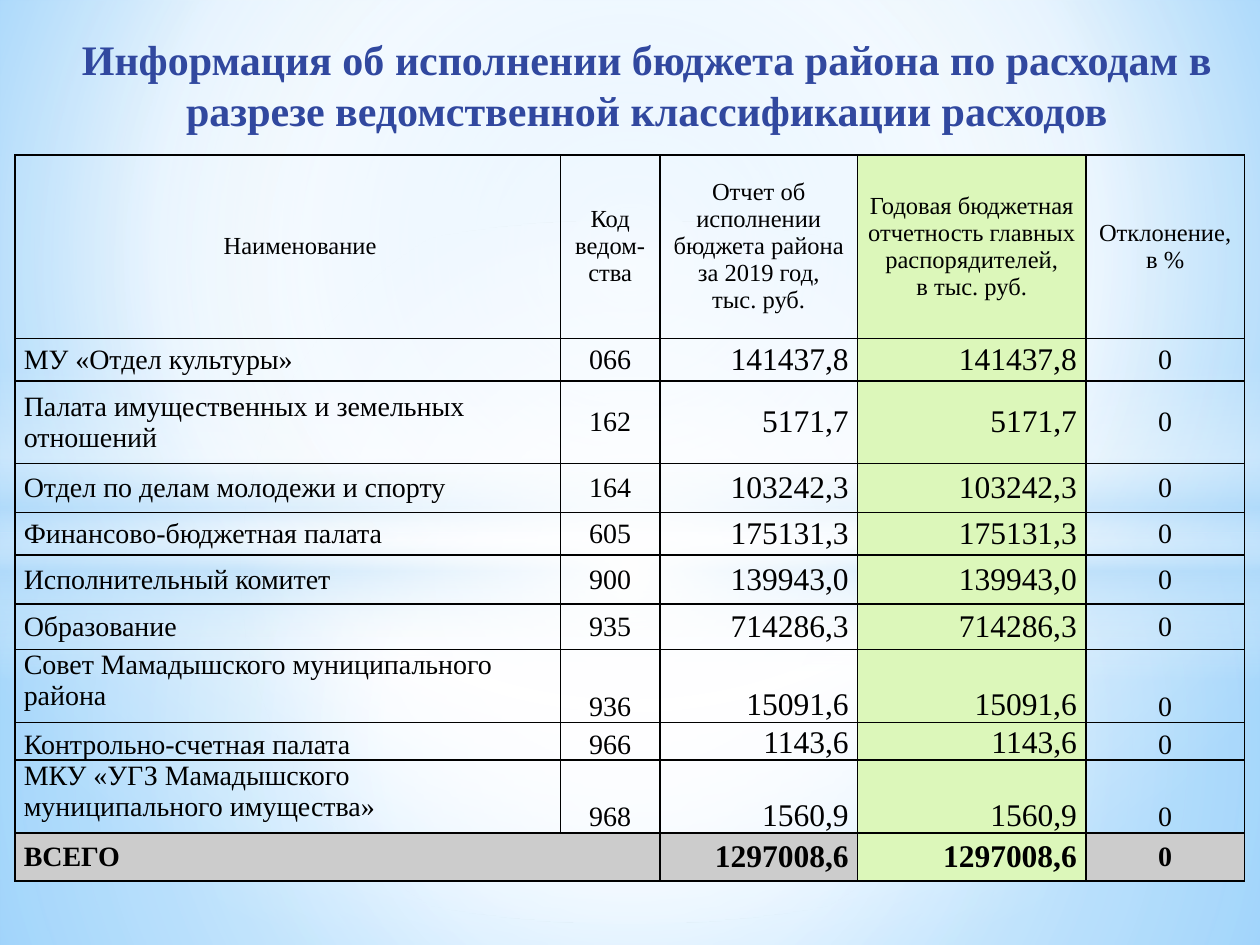
from dataclasses import dataclass

from lxml import etree
from pptx import Presentation
from pptx.dml.color import RGBColor
from pptx.enum.shapes import MSO_SHAPE
from pptx.enum.text import MSO_ANCHOR, PP_ALIGN
from pptx.oxml.ns import qn
from pptx.util import Cm, Pt

LEFT, CENTER, RIGHT = PP_ALIGN.LEFT, PP_ALIGN.CENTER, PP_ALIGN.RIGHT
TOP, MIDDLE, BOTTOM = MSO_ANCHOR.TOP, MSO_ANCHOR.MIDDLE, MSO_ANCHOR.BOTTOM
RECTANGLE, OVAL = MSO_SHAPE.RECTANGLE, MSO_SHAPE.OVAL

FONT = "Times New Roman"
COLORS = {
    "title": "31489F",
    "black": "000000",
    "white": "FFFFFF",
    "haze": "B4DCFA",
    "sky": "9ED5FF",
    "deep_sky": "5BB9FF",
    "green": "DCF7BA",
    "gray": "CCCCCC",
}
SLIDE_WIDTH, SLIDE_HEIGHT = 25.4, 19.05
CENTERED = (50, 50, 50, 50)


@dataclass
class Stop:
    position: int
    color: str
    opacity: int = 100


@dataclass
class Glow:
    kind: int
    top: float
    height: float
    stops: list[Stop]
    focus: tuple | None = CENTERED


@dataclass
class Department:
    name: str
    code: str
    amount: str
    height: float
    name_anchor: int = MIDDLE
    value_anchor: int = MIDDLE


@dataclass
class Column:
    heading: str
    width: float
    align: int
    size: int


GLOWS = [
    Glow(RECTANGLE, 10.74, 8.31,
         [Stop(0, "white", 91), Stop(37, "white", 76), Stop(100, "haze", 79)]),
    Glow(RECTANGLE, 0, 10.74,
         [Stop(0, "white", 89), Stop(48, "white", 62), Stop(100, "haze", 79)]),
    Glow(RECTANGLE, 7.37, 6.35,
         [Stop(0, "white", 0), Stop(29, "white", 30), Stop(45, "haze", 40),
          Stop(55, "white", 26), Stop(65, "haze", 60), Stop(100, "white", 0)], None),
    Glow(OVAL, 4.45, 14.17, [Stop(0, "white"), Stop(54, "white", 0)]),
]
COLUMNS = [
    Column("Наименование", 11, LEFT, 16),
    Column("Код ведом-ства", 2, CENTER, 16),
    Column("Отчет об исполнении бюджета района за 2019 год,\nтыс. руб.", 3.99, RIGHT, 18),
    Column("Годовая бюджетная отчетность главных распорядителей,\nв тыс. руб.",
           4.6, RIGHT, 18),
    Column("Отклонение,\nв %", 3.2, CENTER, 16),
]
REPORTING_COLUMN = 3
HEADER_HEIGHT = 3.7
DEPARTMENTS = [
    Department("МУ «Отдел культуры»", "066", "141437,8", 0.86),
    Department("Палата имущественных и земельных отношений", "162", "5171,7", 1.66),
    Department("Отдел по делам молодежи и спорту", "164", "103242,3", 0.99),
    Department("Финансово-бюджетная палата", "605", "175131,3", 0.86),
    Department("Исполнительный комитет", "900", "139943,0", 0.99),
    Department("Образование", "935", "714286,3", 0.91),
    Department("Совет Мамадышского муниципального района", "936", "15091,6", 1.47, TOP, BOTTOM),
    Department("Контрольно-счетная палата", "966", "1143,6", 0.76, BOTTOM, BOTTOM),
    Department("МКУ «УГЗ Мамадышского муниципального имущества»", "968", "1560,9",
               1.47, TOP, BOTTOM),
    Department("ВСЕГО", "", "1297008,6", 0.97),
]


def rgb(color: str) -> RGBColor:
    return RGBColor.from_string(COLORS[color])


def add_color(parent, color: str, opacity: int = 100) -> None:
    value = etree.SubElement(parent, qn("a:srgbClr"), val=COLORS[color])
    if opacity < 100:
        etree.SubElement(value, qn("a:alpha"), val=str(opacity * 1000))


def set_gradient(fill, properties, stops: list[Stop], focus: tuple | None) -> None:
    """Fill with a circular gradient around focus, or a vertical one without it."""
    fill.solid()
    solid = properties.find(qn("a:solidFill"))
    gradient = etree.Element(qn("a:gradFill"), rotWithShape="1")
    stop_list = etree.SubElement(gradient, qn("a:gsLst"))
    for stop in stops:
        node = etree.SubElement(stop_list, qn("a:gs"), pos=str(stop.position * 1000))
        add_color(node, stop.color, stop.opacity)
    if focus:
        circle = etree.SubElement(gradient, qn("a:path"), path="circle")
        edges = {side: str(part * 1000) for side, part in zip("ltrb", focus)}
        etree.SubElement(circle, qn("a:fillToRect"), edges)
    else:
        etree.SubElement(gradient, qn("a:lin"), ang="5400000", scaled="0")
    properties.replace(solid, gradient)


def draw_glow(slide, glow: Glow) -> None:
    shape = slide.shapes.add_shape(
        glow.kind, 0, Cm(glow.top), Cm(SLIDE_WIDTH), Cm(glow.height))
    shape.shadow.inherit = False
    shape.line.fill.background()
    set_gradient(shape.fill, shape._element.spPr, glow.stops, glow.focus)


def write_text(frame, text: str, align: int, size: int, color: str = "black",
               bold: bool = False) -> None:
    frame.text = text
    for paragraph in frame.paragraphs:
        paragraph.alignment = align
        font = paragraph.font
        font.name, font.size, font.bold = FONT, Pt(size), bold
        font.color.rgb = rgb(color)


def indent(paragraph) -> None:
    paragraph._p.get_or_add_pPr().set("marL", str(Cm(0.5)))


def add_borders(cell) -> None:
    properties = cell._tc.get_or_add_tcPr()
    for index, side in enumerate(("lnL", "lnR", "lnT", "lnB")):
        line = etree.Element(qn(f"a:{side}"), w=str(Pt(1)))
        add_color(etree.SubElement(line, qn("a:solidFill")), "black")
        properties.insert(index, line)


def fill_cell(cell, text: str, align: int, size: int, anchor: int = MIDDLE,
              color: str | None = None, bold: bool = False) -> None:
    write_text(cell.text_frame, text, align, size, bold=bold)
    cell.vertical_anchor = anchor
    cell.margin_left = cell.margin_right = Cm(0.18)
    cell.margin_top = cell.margin_bottom = 0
    if color:
        cell.fill.solid()
        cell.fill.fore_color.rgb = rgb(color)
    else:
        cell.fill.background()
    add_borders(cell)


def draw_title(slide) -> None:
    frame = slide.shapes.add_textbox(Cm(0.89), Cm(0.53), Cm(23.8), Cm(2.34)).text_frame
    frame.word_wrap = True
    frame.vertical_anchor = MIDDLE
    frame.margin_left = frame.margin_right = Cm(0.15)
    write_text(frame, "Информация об исполнении бюджета района по расходам в разрезе "
               "ведомственной классификации расходов", CENTER, 24, "title", True)
    indent(frame.paragraphs[0])


def draw_table(slide) -> None:
    heights = [HEADER_HEIGHT] + [department.height for department in DEPARTMENTS]
    width = sum(column.width for column in COLUMNS)
    table = slide.shapes.add_table(len(heights), len(COLUMNS), Cm(0.3), Cm(3.12),
                                   Cm(width), Cm(sum(heights))).table
    table.first_row = table.horz_banding = False
    for row, height in zip(table.rows, heights):
        row.height = Cm(height)
    for index, column in enumerate(COLUMNS):
        table.columns[index].width = Cm(column.width)
        highlight = "green" if index == REPORTING_COLUMN else None
        fill_cell(table.cell(0, index), column.heading, CENTER, 14, color=highlight)
        for row, item in enumerate(DEPARTMENTS, 1):
            values = (item.name, item.code, item.amount, item.amount, "0")
            is_total = item is DEPARTMENTS[-1]
            fill_cell(table.cell(row, index), values[index], column.align, column.size,
                      item.value_anchor if index else item.name_anchor,
                      highlight or ("gray" if is_total else None), is_total)
    for index in (0, 1):
        table.cell(0, index).text_frame.paragraphs[0].space_after = Pt(6)
    indent(table.cell(0, 0).text_frame.paragraphs[0])
    total_row = len(DEPARTMENTS)
    table.cell(total_row, 0).merge(table.cell(total_row, 1))


def main() -> None:
    presentation = Presentation()
    presentation.slide_width, presentation.slide_height = Cm(SLIDE_WIDTH), Cm(SLIDE_HEIGHT)
    slide = presentation.slides.add_slide(presentation.slide_layouts[6])
    background = slide.background.fill
    set_gradient(background, slide._element.find(".//" + qn("p:bgPr")),
                 [Stop(0, "sky"), Stop(60, "white"), Stop(100, "deep_sky")],
                 (20, 10, 20, 60))
    for glow in GLOWS:
        draw_glow(slide, glow)
    draw_title(slide)
    draw_table(slide)
    presentation.save("out.pptx")


if __name__ == "__main__":
    main()
